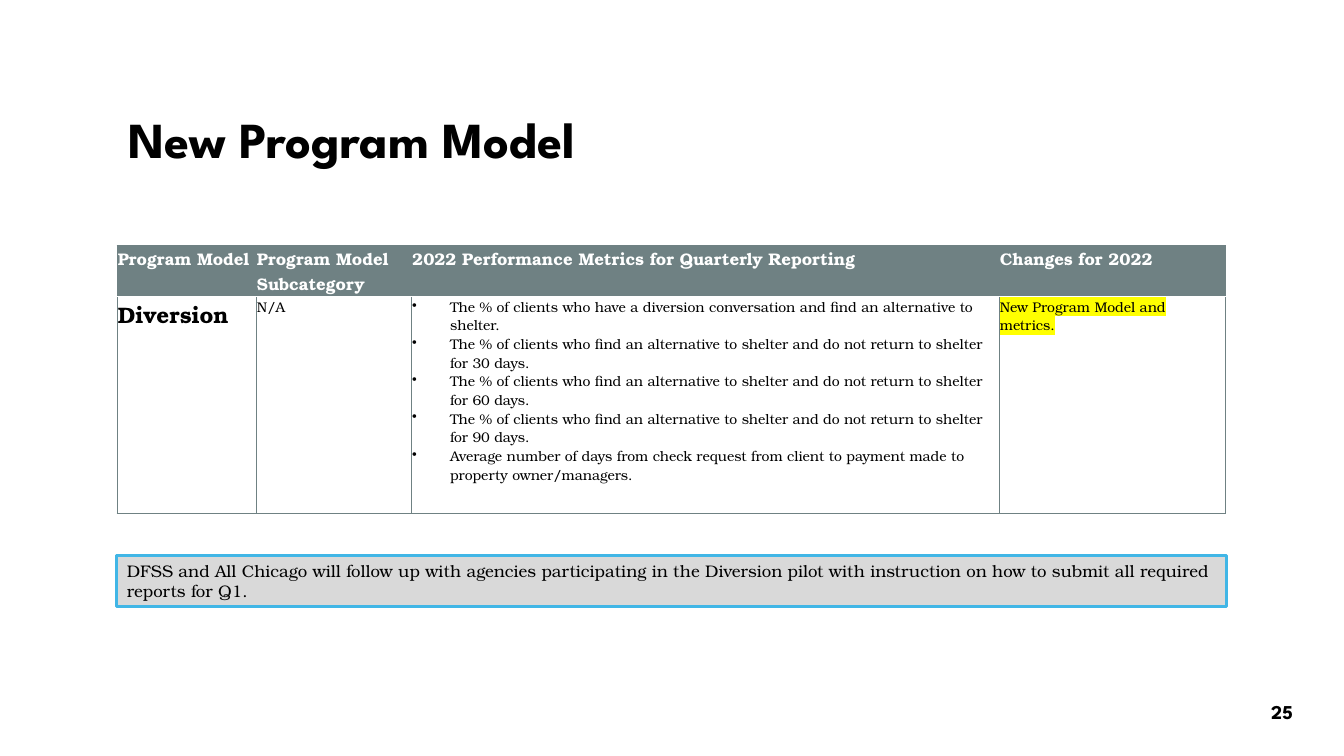
"""Build the New Program Model slide with its metrics table and follow-up note."""
import lxml.etree
import pptx
import pptx.dml.color
import pptx.enum.shapes
import pptx.enum.text
import pptx.oxml
import pptx.oxml.ns
import pptx.util

Pt = pptx.util.Pt
RGBColor = pptx.dml.color.RGBColor
qn = pptx.oxml.ns.qn

BLACK = RGBColor(0x00, 0x00, 0x00)
WHITE = RGBColor(0xFF, 0xFF, 0xFF)
SLATE = RGBColor(0x6F, 0x81, 0x83)
SKY = RGBColor(0x41, 0xB6, 0xE6)
GRAY = RGBColor(0xD9, 0xD9, 0xD9)
YELLOW = RGBColor(0xFF, 0xFF, 0x00)
HEADING_FONT = "League Spartan"
BODY_FONT = "TeX Gyre Bonum"

HEADERS = [
    "Program Model",
    "Program Model Subcategory",
    "2022 Performance Metrics for Quarterly Reporting",
    "Changes for 2022",
]
METRICS = [
    "The % of clients who have a diversion conversation and find an alternative to shelter.",
    *[
        "The % of clients who find an alternative to shelter and do not return "
        f"to shelter for {days} days."
        for days in (30, 60, 90)
    ],
    "Average number of days from check request from client to payment made to "
    "property owner/managers.",
]
DETAILS = [["Diversion"], ["N/A"], METRICS, ["New Program Model and metrics."]]
COLUMN_WIDTHS = [99.4, 110.9, 419.8, 162]
ROW_HEIGHTS = [34.6, 154.8]


def add_span(para, text, font_name, size, color, bold=False):
    span = para.add_run()
    span.text = text
    span.font.name = font_name
    span.font.size = Pt(size)
    span.font.bold = bold
    span.font.color.rgb = color
    return span


def add_border(cell, side, color, width):
    properties = cell._tc.get_or_add_tcPr()
    line = lxml.etree.SubElement(properties, qn(f"a:ln{side}"), w=str(Pt(width)))
    fill = lxml.etree.SubElement(line, qn("a:solidFill"))
    lxml.etree.SubElement(fill, qn("a:srgbClr"), val=str(color))


deck = pptx.Presentation()
deck.slide_width = Pt(960)
deck.slide_height = Pt(540)
page = deck.slides.add_slide(deck.slide_layouts[5])

title = page.shapes.title
title.left, title.top, title.width, title.height = Pt(84.5), Pt(38.2), Pt(792), Pt(126.7)
title.text_frame.vertical_anchor = pptx.enum.text.MSO_ANCHOR.MIDDLE
para = title.text_frame.paragraphs[0]
para.alignment = pptx.enum.text.PP_ALIGN.LEFT
para.line_spacing = 0.9
add_span(para, "New Program Model", HEADING_FONT, 36, BLACK, True)

table = page.shapes.add_table(
    2, 4, Pt(83.5), Pt(175.3), Pt(sum(COLUMN_WIDTHS)), Pt(sum(ROW_HEIGHTS))
).table
table.horz_banding = False
for column, width in zip(table.columns, COLUMN_WIDTHS):
    column.width = Pt(width)
for row, height in zip(table.rows, ROW_HEIGHTS):
    row.height = Pt(height)

for column_index, (header, details) in enumerate(zip(HEADERS, DETAILS)):
    for row_index, texts in enumerate([[header], details]):
        cell = table.cell(row_index, column_index)
        is_header = row_index == 0
        is_model = texts == ["Diversion"]
        cell.margin_left = cell.margin_right = Pt(0.7)
        cell.margin_top = cell.margin_bottom = Pt(0.7)
        for side in "LRTB":
            is_divider = side == ("B" if is_header else "T")
            add_border(cell, side, WHITE if is_divider else SLATE, 1 if is_divider else 0.5)
        cell.fill.solid()
        cell.fill.fore_color.rgb = SLATE if is_header else WHITE
        for text_index, text in enumerate(texts):
            frame = cell.text_frame
            para = frame.paragraphs[0] if text_index == 0 else frame.add_paragraph()
            if texts is METRICS:
                properties = para._p.get_or_add_pPr()
                properties.set("marL", str(Pt(27)))
                properties.set("indent", str(Pt(-27)))
                lxml.etree.SubElement(properties, qn("a:buChar"), char="•")
            size = 12 if is_header else 16 if is_model else 10
            color = WHITE if is_header else BLACK
            span = add_span(para, text, BODY_FONT, size, color, is_header or is_model)

highlight = lxml.etree.Element(qn("a:highlight"))
lxml.etree.SubElement(highlight, qn("a:srgbClr"), val=str(YELLOW))
span.font._element.find(qn("a:solidFill")).addnext(highlight)

note = page.shapes.add_shape(
    pptx.enum.shapes.MSO_SHAPE.RECTANGLE, Pt(83.5), Pt(396.7), Pt(792.7), Pt(36.3)
)
note.shadow.inherit = False
note.fill.solid()
note.fill.fore_color.rgb = GRAY
note.line.color.rgb = SKY
note.line.width = Pt(2.25)
note.text_frame.word_wrap = True
note.text_frame.vertical_anchor = pptx.enum.text.MSO_ANCHOR.TOP
para = note.text_frame.paragraphs[0]
para.alignment = pptx.enum.text.PP_ALIGN.LEFT
add_span(
    para,
    "DFSS and All Chicago will follow up with agencies participating in the Diversion pilot "
    "with instruction on how to submit all required reports for Q1.",
    BODY_FONT, 12, BLACK,
)

number = page.shapes.add_textbox(Pt(890.6), Pt(493.9), Pt(50.4), Pt(28.8))
number.text_frame.word_wrap = True
number.text_frame.vertical_anchor = pptx.enum.text.MSO_ANCHOR.MIDDLE
para = number.text_frame.paragraphs[0]
para.alignment = pptx.enum.text.PP_ALIGN.CENTER
add_span(para, "25", HEADING_FONT, 14, BLACK, True)

deck.save("out.pptx")
